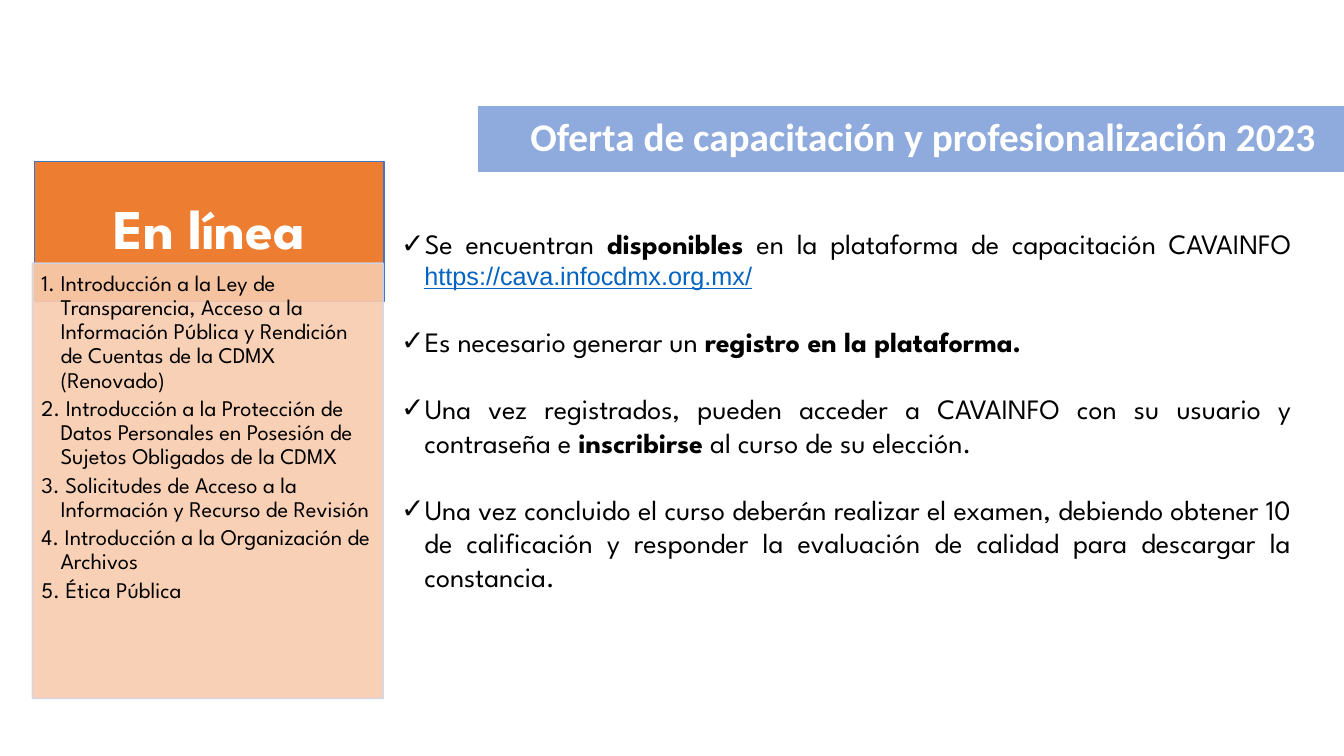
from pptx import Presentation
from pptx.dml.color import RGBColor
from pptx.enum import shapes, text
from pptx.oxml.ns import qn
from pptx.util import Inches, Pt
from lxml import etree

COLORS = {
    "white": "FFFFFF", "black": "000000", "orange": "ED7D31", "blue": "4472C4",
    "peach": "F8CBAD", "pale": "CFD5EA", "bar": "8FAADC", "link": "0563C1",
}
FONT = "League Spartan"
BOLD = {"bold": True}
LINK = {"size": 18, "font": "Arial", "color": "link", "underline": True}

COURSES = [
    "1. Introducción a la Ley de Transparencia, Acceso a la Información Pública "
    "y Rendición de Cuentas de la CDMX (Renovado)",
    "2. Introducción a la Protección de Datos Personales en Posesión de Sujetos "
    "Obligados de la CDMX",
    "3. Solicitudes de Acceso a la Información y Recurso de Revisión",
    "4. Introducción a la Organización de Archivos",
    "5. Ética Pública",
]

# Each step is a list of (wording, format) pieces
STEPS = [
    [("Se encuentran ", {}), ("disponibles", BOLD),
     (" en la plataforma de capacitación CAVAINFO ", {}),
     ("https://cava.infocdmx.org.mx/", LINK)],
    [("Es necesario generar un ", {}), ("registro en la plataforma.", BOLD)],
    [("Una vez registrados, pueden acceder a CAVAINFO con su usuario y contraseña e ", {}),
     ("inscribirse", BOLD), (" al curso de su elección.", {})],
    [("Una vez concluido el curso deberán realizar el examen, debiendo obtener 10 de "
      "calificación y responder la evaluación de calidad para descargar la constancia.", {})],
]


def rgb(name):
    return RGBColor.from_string(COLORS[name])


def add_run(p, wording, size=20, font=FONT, color="black", bold=False, underline=False):
    r = p.add_run()
    r.text = wording
    r.font.size, r.font.name = Pt(size), font
    r.font.bold, r.font.underline = bold, underline
    r.font.color.rgb = rgb(color)


def format_paragraph(p, align=text.PP_ALIGN.LEFT, line=1.0, before=0, after=0,
                     left=0, hang=0, bullet=None):
    p.alignment, p.line_spacing = align, line
    p.space_before, p.space_after = Pt(before), Pt(after)
    pPr = p._p.get_or_add_pPr()
    pPr.set("marL", str(Inches(left)))
    pPr.set("indent", str(-Inches(hang)))
    if bullet:
        etree.SubElement(pPr, qn("a:buFont")).set("typeface", "Arial")
        etree.SubElement(pPr, qn("a:buChar")).set("char", bullet)
    else:
        etree.SubElement(pPr, qn("a:buNone"))


def place(sp, left, top, width, height):
    sp.left, sp.top = Inches(left), Inches(top)
    sp.width, sp.height = Inches(width), Inches(height)


def paint(sp, fill, line, alpha=None):
    sp.fill.solid()
    sp.fill.fore_color.rgb = rgb(fill)
    sp.line.color.rgb = rgb(line)
    sp.line.width = Pt(1)
    if alpha:
        for color in sp._element.spPr.iter(qn("a:srgbClr")):
            etree.SubElement(color, qn("a:alpha")).set("val", str(alpha * 1000))


def set_frame(sp, margins=(0.1, 0.05, 0.1, 0.05), anchor=text.MSO_ANCHOR.TOP):
    tf = sp.text_frame
    tf.word_wrap, tf.auto_size = True, text.MSO_AUTO_SIZE.NONE
    tf.vertical_anchor = anchor
    (tf.margin_left, tf.margin_top,
     tf.margin_right, tf.margin_bottom) = map(Inches, margins)
    return tf


def fill_list(tf, items, gap=0, size=20, **layout):
    for i, pieces in enumerate(items):
        p = tf.add_paragraph() if i else tf.paragraphs[0]
        format_paragraph(p, before=gap if i else 0, **layout)
        for wording, style in pieces:
            add_run(p, wording, **{"size": size, **style})


def add_title(title):
    place(title, 4.73, 1.04, 8.63, 0.67)
    paint(title, "bar", "white")
    tf = set_frame(title, (0.53, 0.08, 0.08, 0.08), text.MSO_ANCHOR.MIDDLE)
    p = tf.paragraphs[0]
    format_paragraph(p, line=0.9)
    add_run(p, "Oferta de capacitación y profesionalización 2023",
            size=28, font="Calibri", color="white", bold=True)


def add_heading(s):
    sp = s.shapes.add_shape(shapes.MSO_SHAPE.RECTANGLE, Inches(0.34), Inches(1.6),
                            Inches(3.47), Inches(1.39))
    sp.shadow.inherit = False
    paint(sp, "orange", "blue")
    tf = set_frame(sp, (0.31, 0.18, 0.31, 0.18), text.MSO_ANCHOR.MIDDLE)
    p = tf.paragraphs[0]
    format_paragraph(p, align=text.PP_ALIGN.CENTER, line=0.9)
    add_run(p, "En línea", size=40, color="white", bold=True)


def add_courses(s, body):
    place(body, 0.32, 2.61, 3.48, 4.32)
    paint(body, "peach", "pale", alpha=90)
    tf = set_frame(body, (0.09, 0.09, 0.12, 0.14))
    fill_list(tf, [[(course, {})] for course in COURSES], gap=3, size=16,
              line=0.9, left=0.19, hang=0.19)
    # The translucent panel lies over the heading
    s.shapes._spTree.append(body._element)


def add_steps(body):
    place(body, 3.61, 2.2, 9.3, 3.8)
    fill_list(set_frame(body), STEPS, gap=24, align=text.PP_ALIGN.JUSTIFY,
              left=0.5, hang=0.23, bullet="✓")


def main():
    prs = Presentation()
    prs.slide_width, prs.slide_height = Inches(13.33), Inches(7.5)
    s = prs.slides.add_slide(prs.slide_layouts.get_by_name("Two Content"))
    title, courses, steps = list(s.placeholders)[:3]

    # Title bar
    add_title(title)
    # Online course column
    add_heading(s)
    add_courses(s, courses)
    # Enrolment steps
    add_steps(steps)

    prs.save("out.pptx")


if __name__ == "__main__":
    main()
